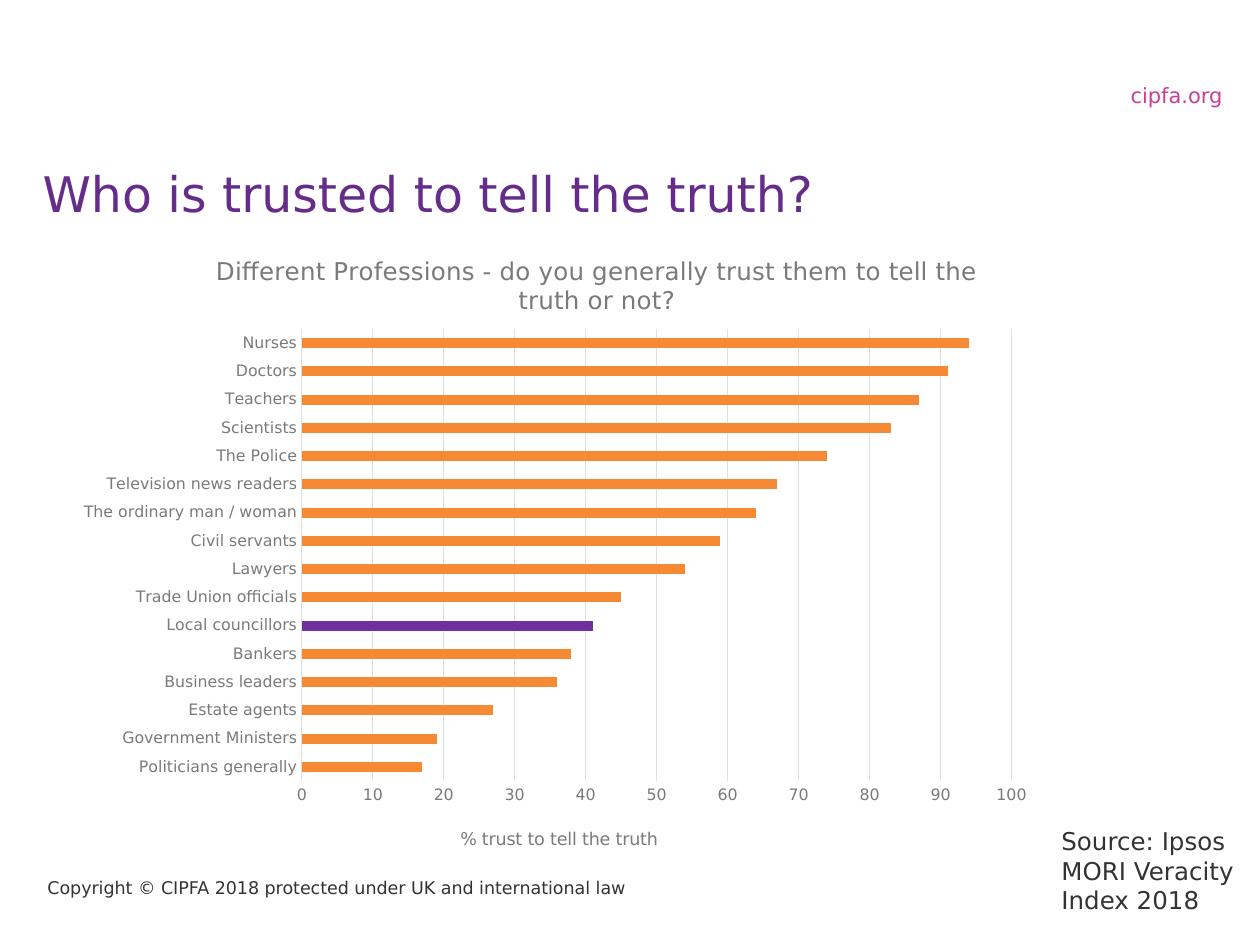
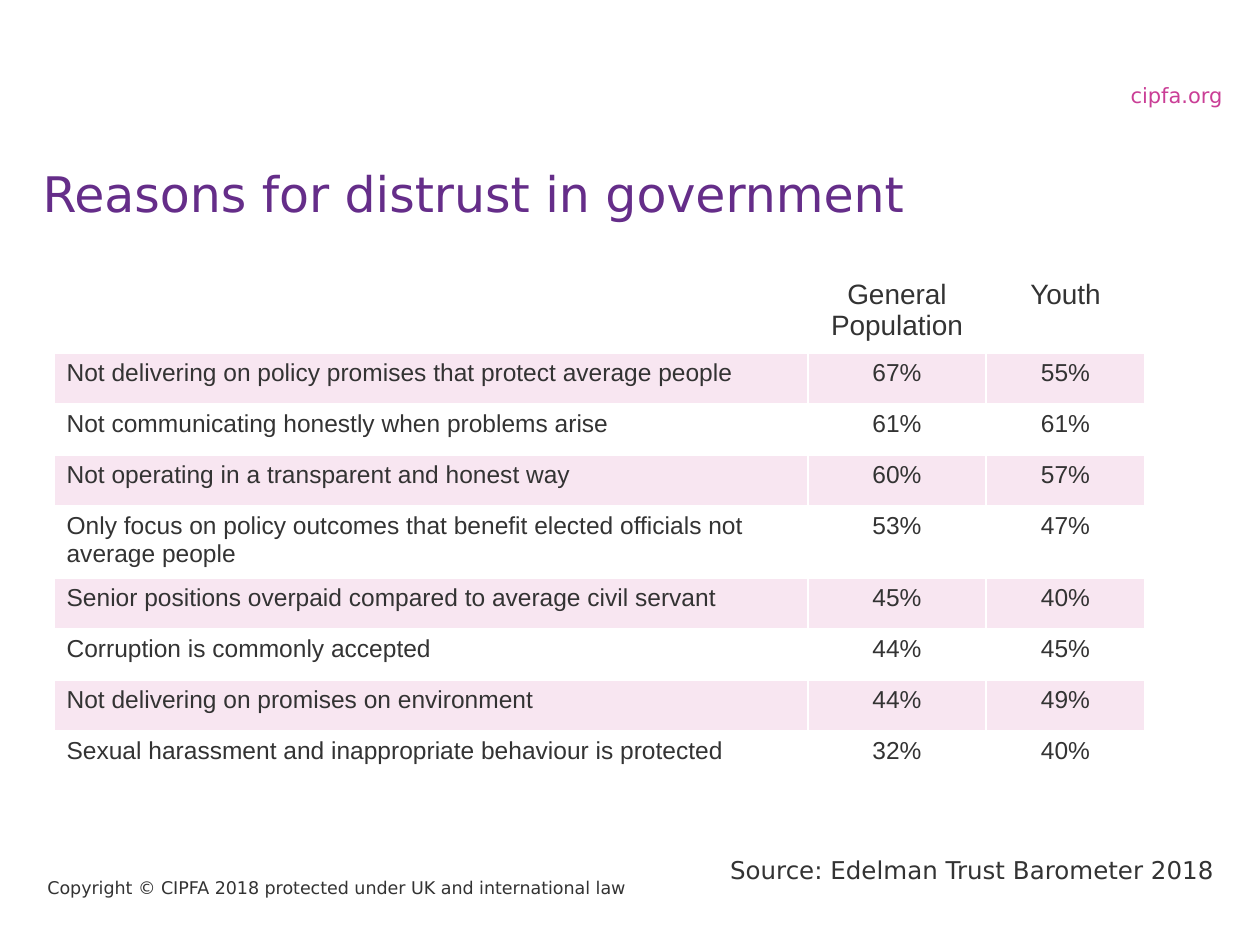
import pptx
import pptx.util
import pptx.chart.data
import pptx.dml.color
import pptx.enum.chart
import pptx.enum.text
import pptx.oxml
import pptx.oxml.ns
from lxml import etree

EMU_PER_PX = 914400 / 126
FONT = "DejaVu Sans"
TABLE_FONT = "Arial"
COLORS = {
    "purple": "652D89",
    "pink": "CA3E96",
    "text": "333333",
    "axis": "7A7A7A",
    "grid": "E0E0E0",
    "bar": "F68933",
    "highlight": "7030A0",
    "white": "FFFFFF",
}
ALIGN = pptx.enum.text.PP_ALIGN
TRUST = [
    ("Politicians generally", 17), ("Government Ministers", 19),
    ("Estate agents", 27), ("Business leaders", 36), ("Bankers", 38),
    ("Local councillors", 41), ("Trade Union officials", 45),
    ("Lawyers", 54), ("Civil servants", 59),
    ("The ordinary man / woman", 64), ("Television news readers", 67),
    ("The Police", 74), ("Scientists", 83), ("Teachers", 87),
    ("Doctors", 91), ("Nurses", 94),
]
HIGHLIGHTED = "Local councillors"
REASONS = [
    ("", "General Population", "Youth"),
    ("Not delivering on policy promises that protect average people", "67%", "55%"),
    ("Not communicating honestly when problems arise", "61%", "61%"),
    ("Not operating in a transparent and honest way", "60%", "57%"),
    ("Only focus on policy outcomes that benefit elected officials not average people", "53%", "47%"),
    ("Senior positions overpaid compared to average civil servant", "45%", "40%"),
    ("Corruption is commonly accepted", "44%", "45%"),
    ("Not delivering on promises on environment", "44%", "49%"),
    ("Sexual harassment and inappropriate behaviour is protected", "32%", "40%"),
]


def px(*lengths):
    return [pptx.util.Emu(round(length * EMU_PER_PX)) for length in lengths]


def rgb(name):
    return pptx.dml.color.RGBColor.from_string(COLORS[name])


def style_font(font, size, color, name=FONT):
    font.size = pptx.util.Pt(size)
    font.name = name
    font.bold = False
    font.color.rgb = rgb(color)


def write(text_frame, text, size, color, align=ALIGN.LEFT, name=FONT):
    paragraph = text_frame.paragraphs[0]
    paragraph.alignment = align
    run = paragraph.add_run()
    run.text = text
    style_font(run.font, size, color, name)


def add_text(slide, box, text, size, color, align=ALIGN.LEFT, wrap=True):
    text_frame = slide.shapes.add_textbox(*px(*box)).text_frame
    text_frame.word_wrap = wrap
    text_frame.auto_size = pptx.enum.text.MSO_AUTO_SIZE.SHAPE_TO_FIT_TEXT
    write(text_frame, text, size, color, align)


def add_slide(presentation, title):
    slide = presentation.slides.add_slide(presentation.slide_layouts[5])
    shape = slide.shapes.title
    shape.left, shape.top, shape.width, shape.height = px(30, 157, 1186, 118)
    shape.text_frame.auto_size = pptx.enum.text.MSO_AUTO_SIZE.NONE
    shape.text_frame.vertical_anchor = pptx.enum.text.MSO_ANCHOR.TOP
    write(shape.text_frame, title, 28, "purple")
    add_text(slide, (838, 76, 397, 38), "cipfa.org", 12, "pink", ALIGN.RIGHT)
    add_text(slide, (35, 871, 620, 34),
             "Copyright © CIPFA 2018 protected under UK and international law",
             10, "text", wrap=False)
    return slide


def set_layout(parent, following, **fractions):
    for old in parent.findall(pptx.oxml.ns.qn("c:layout")):
        parent.remove(old)
    modes = {"xMode": "edge", "yMode": "edge"}
    if "w" in fractions:
        modes = {"layoutTarget": "inner", **modes}
    layout = etree.Element(pptx.oxml.ns.qn("c:layout"))
    manual = etree.SubElement(layout, pptx.oxml.ns.qn("c:manualLayout"))
    for tag, value in {**modes, **fractions}.items():
        etree.SubElement(manual, pptx.oxml.ns.qn("c:" + tag)).set("val", str(value))
    if following is None:
        parent.insert(0, layout)
    else:
        following.addnext(layout)


def add_chart_title(owner, text, size, x, y):
    title = owner.chart_title if hasattr(owner, "chart_title") else owner.axis_title
    write(title.text_frame, text, size, "axis", ALIGN.CENTER)
    element = title.text_frame._txBody.getparent().getparent()
    set_layout(element, element.find(pptx.oxml.ns.qn("c:tx")), x=x, y=y)


def style_axis(axis):
    axis.major_tick_mark = pptx.enum.chart.XL_TICK_MARK.NONE
    axis.minor_tick_mark = pptx.enum.chart.XL_TICK_MARK.NONE
    style_font(axis.tick_labels.font, 9, "axis")


def style_line(line):
    line.color.rgb = rgb("grid")
    line.width = pptx.util.Pt(0.75)


def add_trust_chart(slide):
    data = pptx.chart.data.CategoryChartData()
    data.categories = [profession for profession, percent in TRUST]
    data.add_series("Series 1", [percent for profession, percent in TRUST])
    chart = slide.shapes.add_chart(
        pptx.enum.chart.XL_CHART_TYPE.BAR_CLUSTERED, *px(64, 224, 983, 646), data).chart
    style_font(chart.font, 10, "text")
    chart.has_legend = False
    add_chart_title(chart, "Different Professions - do you generally trust them"
                    " to tell the truth or not?", 14, 0.15, 0.04)

    style_axis(chart.category_axis)
    style_line(chart.category_axis.format.line)
    chart.category_axis.has_major_gridlines = False
    values = chart.value_axis
    style_axis(values)
    values.minimum_scale, values.maximum_scale, values.major_unit = 0, 100, 10
    values.format.line.fill.background()
    values.has_major_gridlines = True
    style_line(values.major_gridlines.format.line)
    add_chart_title(values, "% trust to tell the truth", 10, 0.4, 0.93)

    plot = chart.plots[0]
    plot.gap_width = 182
    plot.vary_by_categories = False
    series = plot.series[0]
    series.format.fill.solid()
    series.format.fill.fore_color.rgb = rgb("bar")
    index = [profession for profession, percent in TRUST].index(HIGHLIGHTED)
    fill = series.points[index].format.fill
    fill.solid()
    fill.fore_color.rgb = rgb("highlight")
    plot_area = chart._chartSpace.chart.plotArea
    set_layout(plot_area, None, x=0.242, y=0.1625, w=0.722, h=0.7)


def fill_cell(cell, color, alpha=None):
    cell.fill.solid()
    cell.fill.fore_color.rgb = rgb(color)
    properties = cell._tc.get_or_add_tcPr()
    if alpha:
        solid = properties.find(".//" + pptx.oxml.ns.qn("a:srgbClr"))
        etree.SubElement(solid, pptx.oxml.ns.qn("a:alpha")).set("val", str(alpha * 1000))
    for position, side in enumerate(("lnL", "lnR", "lnT", "lnB")):
        border = pptx.oxml.parse_xml(
            f'<a:{side} {pptx.oxml.ns.nsdecls("a")} w="12700"><a:solidFill>'
            f'<a:srgbClr val="{COLORS["white"]}"/></a:solidFill></a:{side}>')
        properties.insert(position, border)


def add_reasons_table(slide):
    widths = px(754, 178, 159)
    heights = px(80, 51, 51, 51, 72, 51, 51, 51, 51)
    table = slide.shapes.add_table(
        len(REASONS), len(widths), *px(54, 273), sum(widths), sum(heights)).table
    table.first_row = False
    table.horz_banding = False
    for column, width in zip(table.columns, widths):
        column.width = width
    for row_index, (row, height) in enumerate(zip(table.rows, heights)):
        row.height = height
        for column_index, cell in enumerate(row.cells):
            if row_index % 2:
                fill_cell(cell, "pink", 13)
            else:
                fill_cell(cell, "white")
            text = REASONS[row_index][column_index]
            if text:
                write(cell.text_frame, text, 14 if row_index else 16, "text",
                      ALIGN.CENTER if column_index else ALIGN.LEFT, TABLE_FONT)


def main():
    presentation = pptx.Presentation()
    presentation.slide_width, presentation.slide_height = px(1260, 945)

    slide = add_slide(presentation, "Who is trusted to tell the truth?")
    add_trust_chart(slide)
    add_text(slide, (1049, 820, 211, 102),
             "Source: Ipsos MORI Veracity Index 2018", 14, "text")

    slide = add_slide(presentation, "Reasons for distrust in government")
    add_reasons_table(slide)
    add_text(slide, (709, 849, 526, 43),
             "Source: Edelman Trust Barometer 2018", 14, "text", ALIGN.CENTER)

    presentation.save("out.pptx")


if __name__ == "__main__":
    main()
